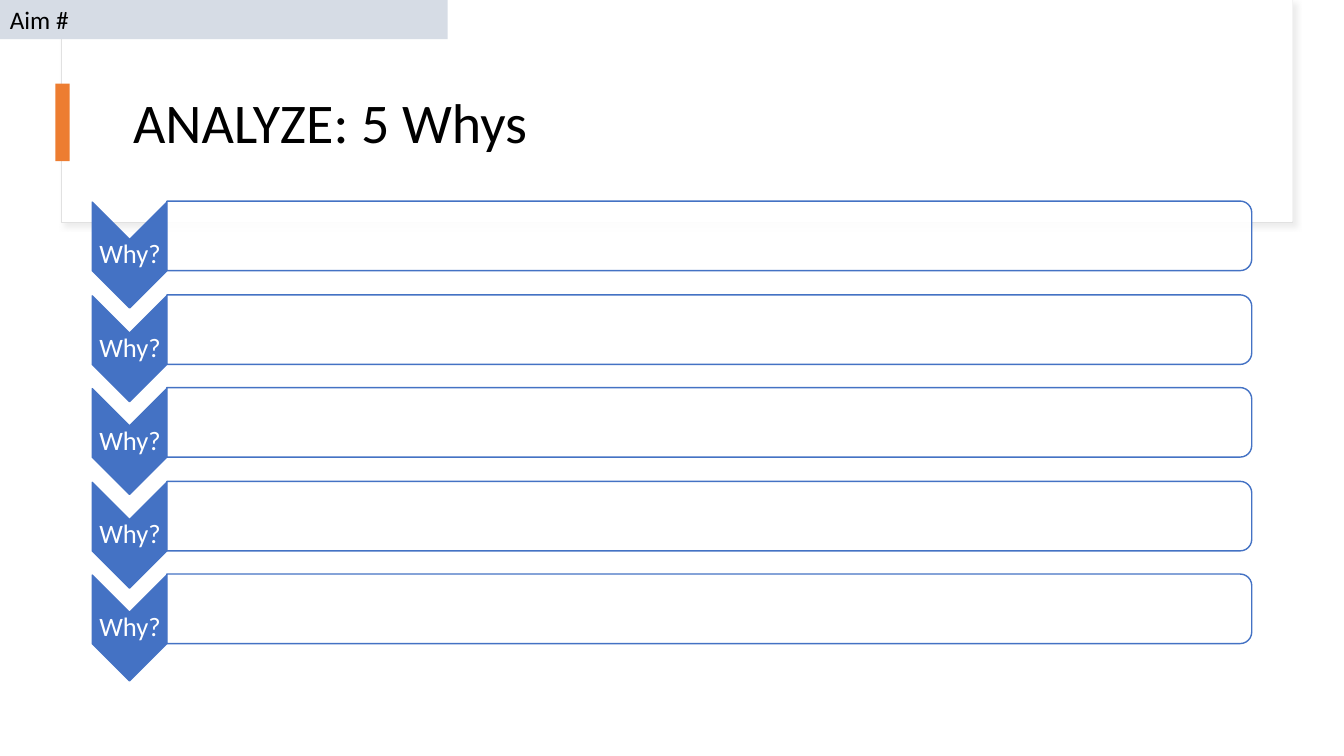
from dataclasses import dataclass
from typing import Optional

from lxml import etree
from pptx import Presentation
from pptx.dml.color import RGBColor
from pptx.enum.shapes import MSO_SHAPE
from pptx.enum.text import MSO_ANCHOR, MSO_AUTO_SIZE, PP_ALIGN
from pptx.oxml.ns import qn
from pptx.util import Emu, Pt

RECT = MSO_SHAPE.RECTANGLE
CHEVRON = MSO_SHAPE.CHEVRON
ROUND_TOP = MSO_SHAPE.ROUND_2_SAME_RECTANGLE
LEFT, CENTER = PP_ALIGN.LEFT, PP_ALIGN.CENTER
TOP, MIDDLE = MSO_ANCHOR.TOP, MSO_ANCHOR.MIDDLE
NO_AUTOFIT = MSO_AUTO_SIZE.NONE

EMU_PER_PX = 9144  # 100 px to the inch
FONT = "Calibri"
BLACK, WHITE, BLUE = "000000", "FFFFFF", "4472C4"
WHY_COUNT = 5
TWO_ROWS = 185  # distance covered by two steps


@dataclass(frozen=True)
class Box:
    left: int
    top: int
    width: int
    height: int

    def down(self, offset: int) -> "Box":
        return Box(self.left, self.top + offset, self.width, self.height)


@dataclass(frozen=True)
class Figure:
    kind: int
    box: Box
    fill: str
    line: Optional[str] = None
    line_width: float = 1
    rotation: int = 0
    opacity: int = 100


CARD = Figure(RECT, Box(61, 0, 1221, 221), WHITE, "E1E1E1", 0.75)
CARD_FACE = Figure(RECT, Box(62, 0, 1220, 220), WHITE)
ACCENT = Figure(RECT, Box(55, 83, 14, 77), "ED7D31")
AIM_TAG = Figure(RECT, Box(0, -1, 444, 40), "D6DCE5")
TITLE_BOX = Box(122, 60, 1112, 129)
WHY_CHEVRON = Box(76, 216, 105, 74)
WHY_LABEL = Box(92, 237, 74, 32)
WHY_ANSWER = Box(669, -304, 69, 1076)


def px(length: int) -> Emu:
    return Emu(length * EMU_PER_PX)


def colour(value: str) -> RGBColor:
    return RGBColor.from_string(value)


def place(shape, box: Box) -> None:
    shape.left, shape.top = px(box.left), px(box.top)
    shape.width, shape.height = px(box.width), px(box.height)


def add_figure(page, figure: Figure):
    box = figure.box
    shape = page.shapes.add_shape(
        figure.kind, px(box.left), px(box.top), px(box.width), px(box.height))
    shape.shadow.inherit = False
    shape.rotation = figure.rotation
    shape.fill.solid()
    shape.fill.fore_color.rgb = colour(figure.fill)
    if figure.opacity < 100:
        fill = shape.element.spPr.find(qn("a:solidFill"))
        etree.SubElement(fill[0], qn("a:alpha"), val=str(figure.opacity * 1000))
    if figure.line:
        shape.line.color.rgb = colour(figure.line)
        shape.line.width = Pt(figure.line_width)
    else:
        shape.line.fill.background()
    return shape


def add_soft_shadow(shape) -> None:
    effects = shape.element.spPr.find(qn("a:effectLst"))
    shadow = etree.SubElement(
        effects, qn("a:outerShdw"), blurRad=str(Pt(4)), dist=str(Pt(3)),
        dir=str(45 * 60000), algn="tl", rotWithShape="0")
    tint = etree.SubElement(shadow, qn("a:srgbClr"), val="D9D9D9")
    etree.SubElement(tint, qn("a:alpha"), val="50000")


def write(shape, text: str, *, size: int, color: str = BLACK, align=LEFT,
          anchor=MIDDLE, spacing: float = 1.0,
          inset: Optional[int] = None) -> None:
    frame = shape.text_frame
    frame.word_wrap = True
    frame.auto_size = NO_AUTOFIT
    frame.vertical_anchor = anchor
    if inset is not None:
        frame.margin_left = frame.margin_right = px(inset)
        frame.margin_top = frame.margin_bottom = px(inset)
    para = frame.paragraphs[0]
    para.alignment = align
    para.line_spacing = spacing
    span = para.add_run()
    span.text = text
    span.font.name = FONT
    span.font.size = Pt(size)
    span.font.color.rgb = colour(color)


def add_header(page) -> None:
    add_soft_shadow(add_figure(page, CARD))
    add_figure(page, CARD_FACE)
    title = page.shapes.title
    place(title, TITLE_BOX)
    write(title, "ANALYZE: 5 Whys", size=40, spacing=0.9)
    page.shapes.element.append(title.element)  # bring in front of the card
    add_figure(page, ACCENT)


def add_why(page, offset: int) -> None:
    add_figure(page, Figure(CHEVRON, WHY_CHEVRON.down(offset), BLUE, BLUE,
                            rotation=90))
    box = WHY_LABEL.down(offset)
    label = page.shapes.add_textbox(
        px(box.left), px(box.top), px(box.width), px(box.height))
    write(label, "Why?", size=19, color=WHITE, align=CENTER, spacing=0.9,
          inset=1)
    add_figure(page, Figure(ROUND_TOP, WHY_ANSWER.down(offset), WHITE, BLUE,
                            rotation=90, opacity=90))


def main() -> None:
    deck = Presentation()
    deck.slide_width, deck.slide_height = px(1333), px(750)
    page = deck.slides.add_slide(deck.slide_layouts[5])

    # Title card
    add_header(page)

    # Chain of questions with empty answer bars
    for row in range(WHY_COUNT):
        add_why(page, (row * TWO_ROWS + 1) // 2)

    # Aim tag in the corner
    write(add_figure(page, AIM_TAG), "Aim #", size=18, anchor=TOP)

    deck.save("out.pptx")


if __name__ == "__main__":
    main()
